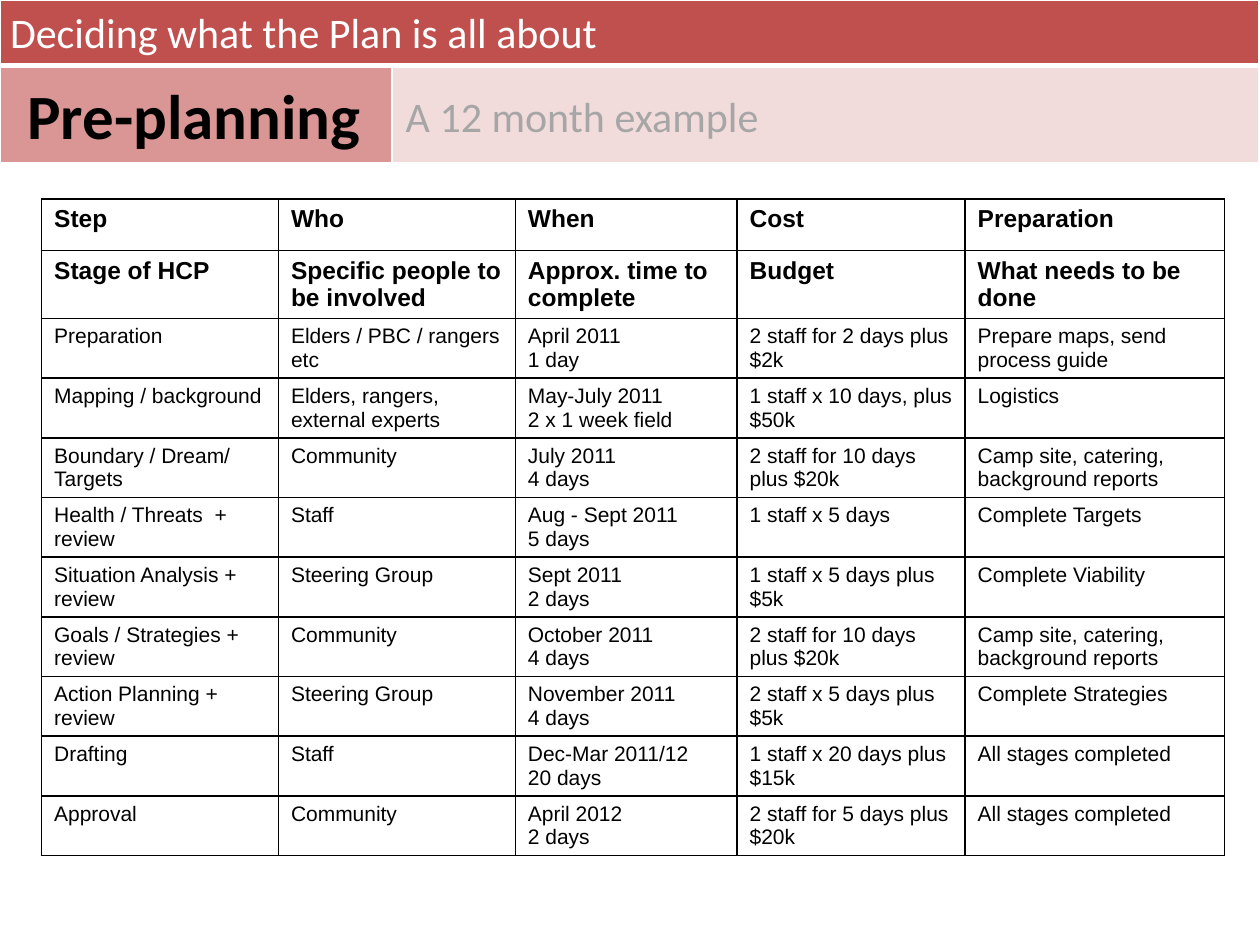
from lxml.etree import SubElement as Sub
from pptx import Presentation
from pptx.dml.color import RGBColor
from pptx.enum.text import MSO_ANCHOR as Anchor, MSO_AUTO_SIZE as Fit, PP_ALIGN as Align
from pptx.oxml.ns import qn
from pptx.util import Inches, Pt


def color(code):
    return RGBColor.from_string(code)


class Deck:
    head_font = "Calibri"
    cell_font = "Arial"
    black, white, gray = "000000", "FFFFFF", "A6A6A6"
    red, rose, pale = "C0504D", "D99694", "F2DCDB"

    def __init__(self):
        self.prs = Presentation()
        self.prs.slide_width, self.prs.slide_height = Inches(10), Inches(7.5)
        self.slide = self.prs.slides.add_slide(self.prs.slide_layouts[3])

    def add_run(self, para, text, font, size, code, bold=False):
        run = para.add_run()
        run.text = text
        run.font.name, run.font.size, run.font.bold = font, Pt(size), bold
        run.font.color.rgb = color(code)

    def label(self, idx, box, text, size, code, bold=False, align=Align.LEFT):
        """Fill a placeholder and bring it in front of the tables."""
        holder = self.slide.placeholders[idx]
        holder.left, holder.top, holder.width, holder.height = map(Inches, box)
        frame = holder.text_frame
        frame.word_wrap, frame.auto_size = True, Fit.NONE
        frame.vertical_anchor = Anchor.MIDDLE
        para = frame.paragraphs[0]
        props = para._p.get_or_add_pPr()
        props.set("marL", "0")
        props.set("indent", "0")
        Sub(props, qn("a:buNone"))
        para.space_before, para.alignment = Pt(0), align
        self.add_run(para, text, self.head_font, size, code, bold)
        holder.element.getparent().append(holder.element)

    def grid(self, left, top, cols, rows, height):
        frame = self.slide.shapes.add_table(
            len(rows), len(cols), Inches(left), Inches(top),
            Inches(sum(cols)), Inches(height))
        table = frame.table
        table.first_row = table.horz_banding = False
        for col, width in zip(table.columns, cols):
            col.width = Inches(width)
        for row, tall in zip(table.rows, rows):
            row.height = Inches(tall)
        frame.height = Inches(height)
        return table

    def cell(self, cell, line, fill=None, base=1):
        """Draw borders first, then the fill; base is the bottom width."""
        props = cell._tc.get_or_add_tcPr()
        for side, width in zip("LRTB", (1, 1, 1, base)):
            edge = Sub(props, qn(f"a:ln{side}"), w=str(Pt(width)))
            Sub(Sub(edge, qn("a:solidFill")), qn("a:srgbClr"), val=line)
        if fill:
            cell.fill.solid()
            cell.fill.fore_color.rgb = color(fill)
        else:
            cell.fill.background()

    def words(self, cell, text, size, bold):
        frame = cell.text_frame
        for num, part in enumerate(text.split("\n")):
            para = frame.add_paragraph() if num else frame.paragraphs[0]
            self.add_run(para, part, self.cell_font, size, self.black, bold)


STEPS = [
    ("Step", "Who", "When", "Cost", "Preparation"),
    ("Stage of HCP", "Specific people to be involved",
     "Approx. time to complete", "Budget", "What needs to be done"),
    ("Preparation", "Elders / PBC / rangers etc", "April 2011\n1 day",
     "2 staff for 2 days plus $2k", "Prepare maps, send process guide"),
    ("Mapping / background", "Elders, rangers, external experts",
     "May-July 2011\n2 x 1 week field", "1 staff x 10 days, plus $50k", "Logistics"),
    ("Boundary / Dream/ Targets", "Community", "July 2011\n4 days",
     "2 staff for 10 days plus $20k", "Camp site, catering, background reports"),
    ("Health / Threats  + review", "Staff", "Aug - Sept 2011\n5 days",
     "1 staff x 5 days", "Complete Targets"),
    ("Situation Analysis + review", "Steering Group", "Sept 2011\n2 days",
     "1 staff x 5 days plus $5k", "Complete Viability"),
    ("Goals / Strategies + review", "Community", "October 2011\n4 days",
     "2 staff for 10 days plus $20k", "Camp site, catering, background reports"),
    ("Action Planning + review", "Steering Group", "November 2011\n4 days",
     "2 staff x 5 days plus $5k", "Complete Strategies"),
    ("Drafting", "Staff", "Dec-Mar 2011/12\n20 days",
     "1 staff x 20 days plus $15k", "All stages completed"),
    ("Approval", "Community", "April 2012\n2 days",
     "2 staff for 5 days plus $20k", "All stages completed"),
]


def main():
    deck = Deck()

    # Banner bands
    band = deck.grid(0, 0, [3.11, 6.88], [0.52, 0.77], 1.29)
    band.cell(0, 0).merge(band.cell(0, 1))
    fills = [(deck.red, deck.red), (deck.rose, deck.pale)]
    for r, pair in enumerate(fills):
        for c, fill in enumerate(pair):
            deck.cell(band.cell(r, c), deck.white, fill, 1 if r else 3)

    # Planning table: two bold heading rows, then the steps
    plan = deck.grid(0.33, 1.58, [1.88, 1.88, 1.76, 1.81, 2.06],
                     [0.41] * len(STEPS), 5.47)
    for r, step in enumerate(STEPS):
        head = r < 2
        for c, text in enumerate(step):
            cell = plan.cell(r, c)
            deck.cell(cell, deck.black)
            deck.words(cell, text, 14 if head else 12, head)

    # Banner text
    deck.label(1, (-0.02, 0, 9.98, 0.51),
               "Deciding what the Plan is all about", 24, deck.white)
    deck.label(0, (0, 0.55, 3.08, 0.71), "Pre-planning", 36, deck.black,
               True, Align.CENTER)
    deck.label(2, (3.12, 0.67, 6.88, 0.5), "A 12 month example", 24, deck.gray)

    deck.prs.save("out.pptx")


if __name__ == "__main__":
    main()
